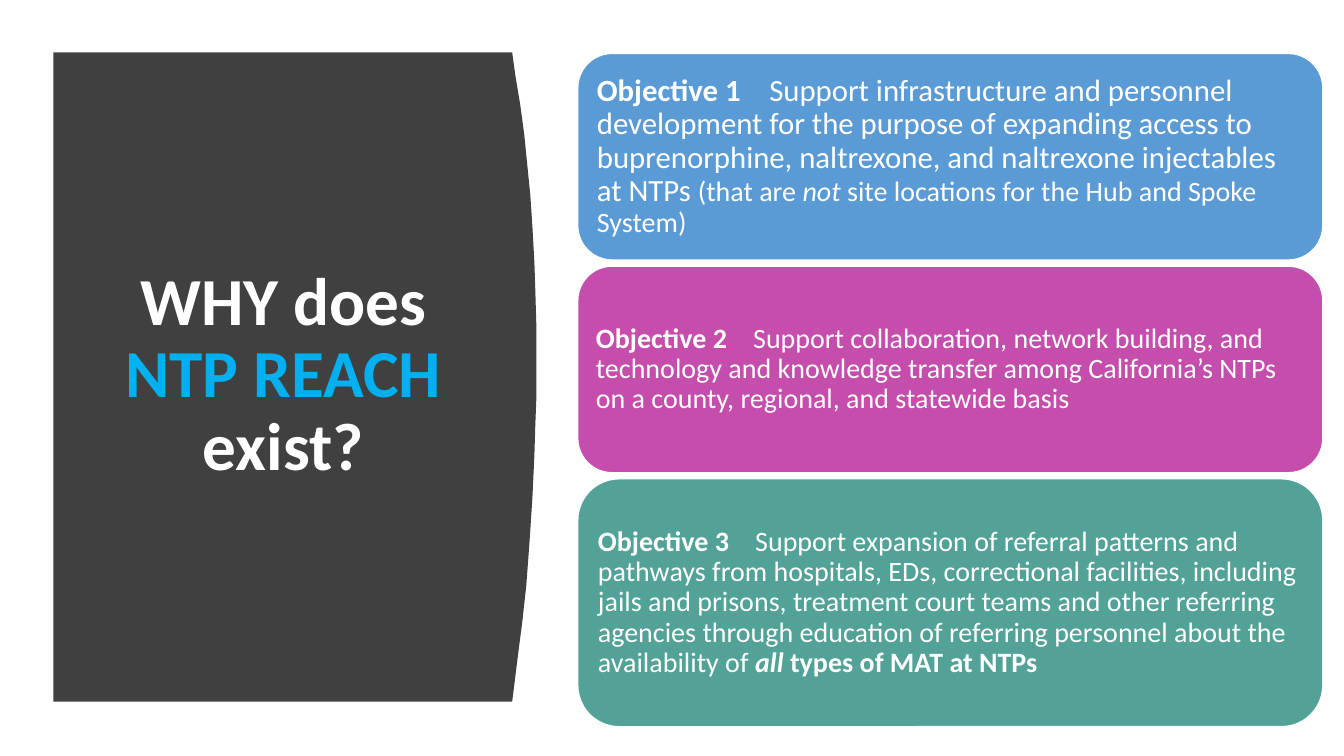
from dataclasses import dataclass

from lxml import etree
from pptx import Presentation
from pptx.dml.color import RGBColor
from pptx.enum import shapes, text
from pptx.oxml.ns import qn
from pptx.util import Inches, Pt


@dataclass(frozen=True)
class Theme:
    font: str = "Calibri"
    white: str = "FFFFFF"
    panel: str = "404040"
    accent: str = "00B0F0"
    blue: str = "5B9BD5"
    magenta: str = "C54DAB"
    teal: str = "52A298"
    title_size: int = 48
    large: int = 22
    normal: int = 20


THEME = Theme()

TITLE = [
    ("WHY does ", THEME.white),
    ("NTP REACH ", THEME.accent),
    ("exist?", THEME.white),
]

OBJECTIVES = [
    dict(color=THEME.blue, height=2.05, inset=0.09, tab=1.71, runs=[
        ("Objective 1", THEME.large, "b"),
        ("\tSupport infrastructure and personnel development for the purpose of "
         "expanding access to buprenorphine, naltrexone, and naltrexone "
         "injectables at NTPs ", THEME.large, ""),
        ("(that are ", THEME.normal, ""),
        ("not", THEME.normal, "i"),
        (" site locations for the Hub and Spoke System)", THEME.normal, ""),
    ]),
    dict(color=THEME.magenta, height=2.05, inset=0.08, tab=1.56, runs=[
        ("Objective 2", THEME.normal, "b"),
        ("\tSupport collaboration, network building, and technology and knowledge "
         "transfer among California’s NTPs on a county, regional, and statewide "
         "basis", THEME.normal, ""),
    ]),
    dict(color=THEME.teal, height=2.46, inset=0.08, tab=1.56, runs=[
        ("Objective 3", THEME.normal, "b"),
        ("\tSupport expansion of referral patterns and pathways from hospitals, "
         "EDs, correctional facilities, including jails and prisons, treatment "
         "court teams and other referring agencies through education of referring "
         "personnel about the availability of ", THEME.normal, ""),
        ("all", THEME.normal, "bi"),
        (" types of MAT at NTPs", THEME.normal, "b"),
    ]),
]

PANEL_LEFT, PANEL_TOP, PANEL_BOTTOM = 0.53, 0.52, 6.96
PANEL_CURVE = [
    (5.08, PANEL_TOP), (5.11, 0.74), (5.16, 1.04), (5.2, 1.34), (5.23, 1.64),
    (5.26, 1.94), (5.28, 2.24), (5.3, 2.6), (5.31, 2.9), (5.32, 3.25),
    (5.32, 3.94), (5.31, 4.2), (5.3, 4.52), (5.28, 4.95), (5.25, 5.4),
    (5.22, 5.81), (5.18, 6.17), (5.14, 6.48), (5.11, 6.72), (5.08, PANEL_BOTTOM),
]
TITLE_BOX = (0.94, 1.11, 3.74, 5.24)
CARD_LEFT, CARD_TOP, CARD_WIDTH, CARD_GAP = 5.73, 0.53, 7.39, 0.06


def color(value):
    return RGBColor.from_string(value)


def prepare_paragraph(shape, alignment):
    frame = shape.text_frame
    frame.word_wrap = True
    frame.vertical_anchor = text.MSO_ANCHOR.MIDDLE
    paragraph = frame.paragraphs[0]
    paragraph.alignment = alignment
    paragraph.line_spacing = 0.9
    return paragraph


def add_run(paragraph, words, size, fill, style):
    run = paragraph.add_run()
    run.text = words
    run.font.name = THEME.font
    run.font.size = Pt(size)
    run.font.color.rgb = color(fill)
    run.font.bold = "b" in style
    run.font.italic = "i" in style


def set_tab(paragraph, position):
    properties = paragraph._p.get_or_add_pPr()
    tabs = etree.SubElement(properties, qn("a:tabLst"))
    etree.SubElement(tabs, qn("a:tab"), pos=str(Inches(position)), algn="l")


def add_panel(slide):
    outline = [*PANEL_CURVE, (PANEL_LEFT, PANEL_BOTTOM)]
    builder = slide.shapes.build_freeform(
        Inches(PANEL_LEFT), Inches(PANEL_TOP), scale=1.0)
    builder.add_line_segments(
        [(Inches(x), Inches(y)) for x, y in outline], close=True)
    panel = builder.convert_to_shape()
    panel.shadow.inherit = False
    panel.fill.solid()
    panel.fill.fore_color.rgb = color(THEME.panel)
    panel.line.fill.background()


def add_title(slide):
    title = slide.shapes.add_textbox(*map(Inches, TITLE_BOX))
    paragraph = prepare_paragraph(title, text.PP_ALIGN.CENTER)
    for words, fill in TITLE:
        add_run(paragraph, words, THEME.title_size, fill, "b")


def add_card(slide, objective, top):
    card = slide.shapes.add_shape(
        shapes.MSO_SHAPE.ROUNDED_RECTANGLE, Inches(CARD_LEFT), Inches(top),
        Inches(CARD_WIDTH), Inches(objective["height"]))
    card.shadow.inherit = False
    card.fill.solid()
    card.fill.fore_color.rgb = color(objective["color"])
    card.line.color.rgb = color(THEME.white)
    card.line.width = Pt(1)
    frame = card.text_frame
    inset = Inches(objective["inset"])
    frame.margin_left = frame.margin_right = inset
    frame.margin_top = frame.margin_bottom = inset
    paragraph = prepare_paragraph(card, text.PP_ALIGN.LEFT)
    set_tab(paragraph, objective["tab"])
    for words, size, style in objective["runs"]:
        add_run(paragraph, words, size, THEME.white, style)


def main():
    presentation = Presentation()
    presentation.slide_width = Inches(13.33)
    presentation.slide_height = Inches(7.5)
    slide = presentation.slides.add_slide(presentation.slide_layouts[6])
    add_panel(slide)
    add_title(slide)
    top = CARD_TOP
    for objective in OBJECTIVES:
        add_card(slide, objective, top)
        top += objective["height"] + CARD_GAP
    presentation.save("out.pptx")


if __name__ == "__main__":
    main()
